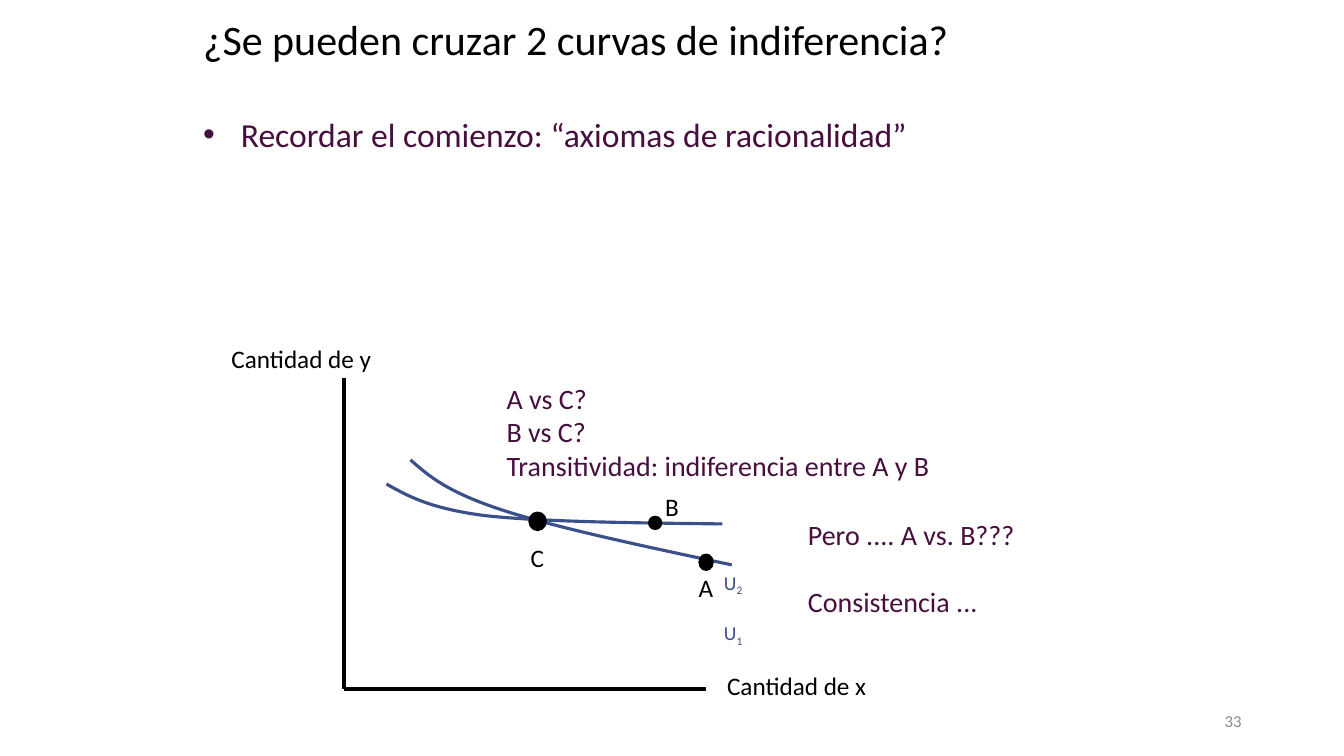
from dataclasses import dataclass

from lxml import etree
from pptx import Presentation
from pptx import util as u
from pptx.dml.color import RGBColor
from pptx.enum import shapes, text
from pptx.oxml import ns

PX = 9525  # EMU per px, 96 px to the inch
FONT = "Calibri"
BLACK = RGBColor(0x00, 0x00, 0x00)
GRAY = RGBColor(0x8C, 0x8C, 0x8C)
BLUE = RGBColor(0x3B, 0x4F, 0x89)
PLUM = RGBColor(0x47, 0x0F, 0x3E)


@dataclass(frozen=True)
class Label:
    left: int
    top: int
    width: int
    height: int
    lines: tuple[str, ...]
    size: int = 18
    color: RGBColor = BLACK
    subscript: str = ""
    gap: int = 0  # points before each line after the first
    align: text.PP_ALIGN = text.PP_ALIGN.LEFT
    anchor: text.MSO_ANCHOR = text.MSO_ANCHOR.MIDDLE


@dataclass(frozen=True)
class Dot:
    left: int
    top: int
    width: int
    height: int


@dataclass(frozen=True)
class Axis:
    start: tuple[int, int]
    end: tuple[int, int]


@dataclass(frozen=True)
class Curve:
    points: tuple[tuple[int, int], ...]  # start, then three points per Bézier


TITLE = Label(184, 8, 896, 64, ("¿Se pueden cruzar 2 curvas de indiferencia?",), 30)
BULLET = Label(184, 104, 928, 136, ("Recordar el comienzo: “axiomas de racionalidad”",),
               24, PLUM, anchor=text.MSO_ANCHOR.TOP)
LABELS = (
    Label(904, 667, 288, 38, ("33",), 12, GRAY, align=text.PP_ALIGN.RIGHT),
    Label(683, 634, 167, 38, ("Cantidad de x",)),
    Label(211, 322, 167, 38, ("Cantidad de y",)),
    Label(680, 588, 56, 32, ("U",), 14, BLUE, subscript="1"),
    Label(680, 540, 56, 32, ("U",), 14, BLUE, subscript="2"),
    Label(656, 540, 27, 38, ("A",)),
    Label(624, 463, 26, 38, ("B",)),
    Label(496, 512, 36, 38, ("C",)),
    Label(473, 358, 461, 106,
          ("A vs C?", "B vs C?", "Transitividad: indiferencia entre A y B"), 20, PLUM),
    Label(760, 488, 249, 106, ("Pero .... A vs. B???", "Consistencia ..."),
          20, PLUM, gap=24),
)
ORIGIN = (328, 656)
AXES = (Axis((328, 360), ORIGIN), Axis(ORIGIN, (672, 656)))
CURVES = (
    Curve(((391, 438), (408, 453), (425, 468), (476, 485),
           (527, 502), (612, 520), (697, 538))),
    Curve(((368, 461), (388, 472), (408, 484), (461, 491),
           (515, 497), (601, 498), (688, 499))),
)
DOTS = (Dot(666, 528, 13, 15), Dot(618, 492, 12, 12), Dot(504, 488, 16, 17))


def px(*lengths: int) -> list[int]:
    return [u.Emu(length * PX) for length in lengths]


def add_span(para, words: str, label: Label):
    span = para.add_run()
    span.text = words
    span.font.name = FONT
    span.font.size = u.Pt(label.size)
    span.font.color.rgb = label.color
    return span


def add_label(page, label: Label):
    box = page.shapes.add_textbox(*px(label.left, label.top, label.width, label.height))
    frame = box.text_frame
    frame.word_wrap = True
    frame.vertical_anchor = label.anchor
    for index, line in enumerate(label.lines):
        para = frame.add_paragraph() if index else frame.paragraphs[0]
        para.alignment = label.align
        if index and label.gap:
            para.space_before = u.Pt(label.gap)
        add_span(para, line, label)
    if label.subscript:
        span = add_span(para, label.subscript, label)
        span.font._element.set("baseline", "-25000")
    return box


def add_bullet(para, indent: int) -> None:
    props = para._p.get_or_add_pPr()
    props.set("marL", str(indent * PX))
    props.set("indent", str(-indent * PX))
    etree.SubElement(props, ns.qn("a:buFont")).set("typeface", "Arial")
    etree.SubElement(props, ns.qn("a:buChar")).set("char", "•")


def add_axis(page, axis: Axis) -> None:
    line = page.shapes.add_connector(
        shapes.MSO_CONNECTOR.STRAIGHT, *px(*axis.start, *axis.end))
    line.line.color.rgb = BLACK
    line.line.width = u.Pt(3)
    etree.SubElement(line._element.spPr, ns.qn("a:effectLst"))


def add_curve(page, curve: Curve) -> None:
    builder = page.shapes.build_freeform(*curve.points[0], scale=PX)
    builder.add_line_segments(curve.points[1:], close=False)
    shape = builder.convert_to_shape()
    shape.shadow.inherit = False
    shape.fill.background()
    shape.line.color.rgb = BLUE
    shape.line.width = u.Pt(2.25)
    # Turn every three straight segments into one cubic Bézier
    segments = list(shape._element.iter(ns.qn("a:lnTo")))
    outline = segments[0].getparent()
    for first in range(0, len(segments), 3):
        bezier = etree.SubElement(outline, ns.qn("a:cubicBezTo"))
        for segment in segments[first:first + 3]:
            bezier.append(segment[0])
            outline.remove(segment)


def add_dot(page, dot: Dot) -> None:
    shape = page.shapes.add_shape(
        shapes.MSO_SHAPE.OVAL, *px(dot.left, dot.top, dot.width, dot.height))
    shape.shadow.inherit = False
    shape.fill.solid()
    shape.fill.fore_color.rgb = BLACK
    shape.line.color.rgb = BLACK
    shape.line.width = u.Pt(1.25)


def main() -> None:
    deck = Presentation()
    deck.slide_width, deck.slide_height = px(1280, 720)
    page = deck.slides.add_slide(deck.slide_layouts[6])

    # Heading and bullet
    title = add_label(page, TITLE)
    title.text_frame.paragraphs[0].line_spacing = 0.9
    bullet = add_label(page, BULLET).text_frame.paragraphs[0]
    bullet.space_before = u.Pt(5)
    add_bullet(bullet, 36)

    # Graph: axes, indifference curves and bundles
    for axis in AXES:
        add_axis(page, axis)
    for curve in CURVES:
        add_curve(page, curve)
    for dot in DOTS:
        add_dot(page, dot)

    # Labels, remarks and page number
    for label in LABELS:
        add_label(page, label)

    deck.save("out.pptx")


if __name__ == "__main__":
    main()
